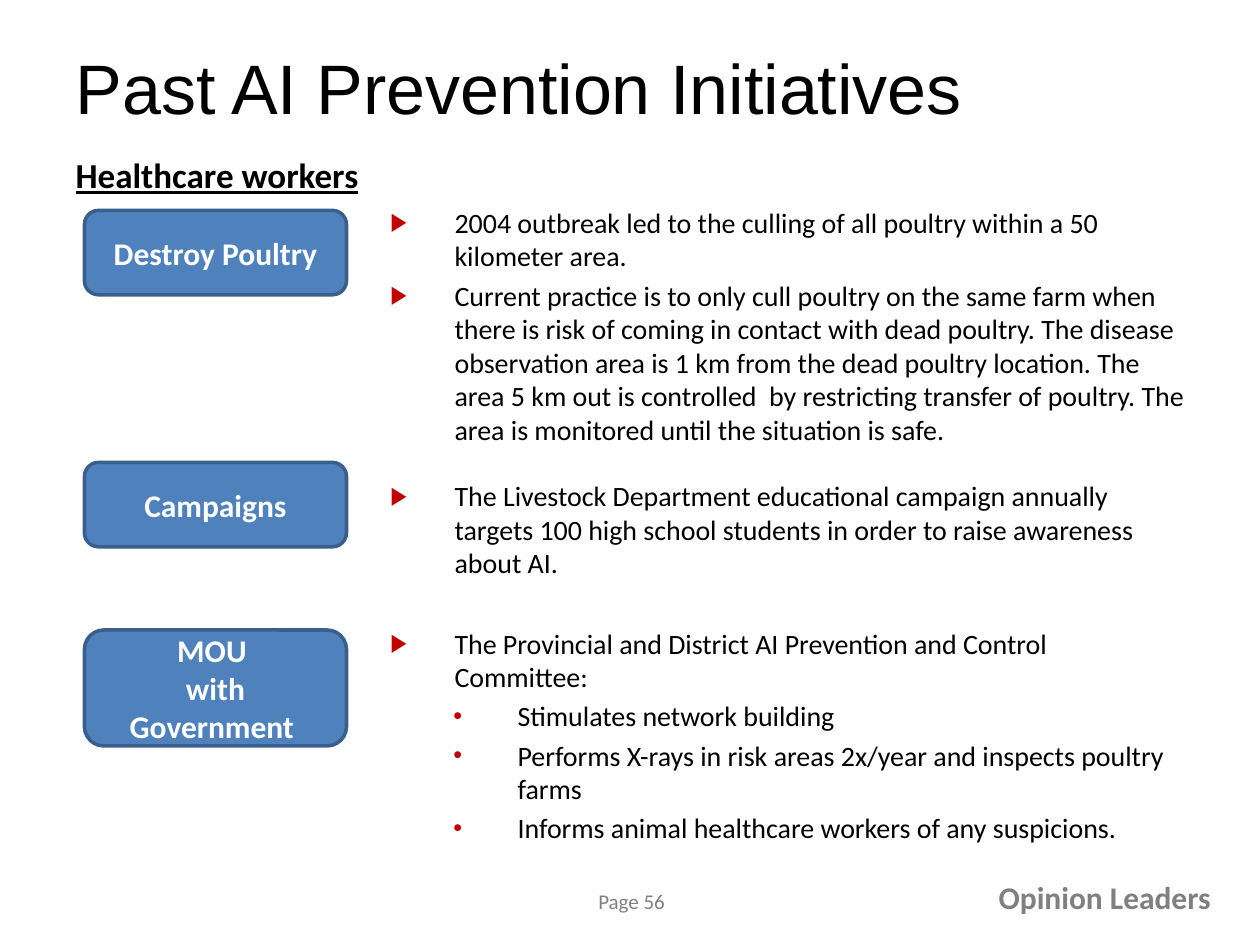
import dataclasses

import pptx
import pptx.dml.color
import pptx.enum.shapes
import pptx.enum.text
import pptx.oxml
import pptx.oxml.ns
import pptx.util

Inches = pptx.util.Inches
Pt = pptx.util.Pt
RGBColor = pptx.dml.color.RGBColor
Align = pptx.enum.text.PP_ALIGN
Anchor = pptx.enum.text.MSO_ANCHOR
AutoSize = pptx.enum.text.MSO_AUTO_SIZE


@dataclasses.dataclass(frozen=True)
class Theme:
    black: str = "000000"
    white: str = "FFFFFF"
    gray: str = "808080"
    red: str = "C00000"
    blue: str = "4F81BD"
    dark_blue: str = "3A5F8C"
    title_font: str = "Arial"
    body_font: str = "Calibri"
    title_size: int = 40
    heading_size: int = 20
    label_size: int = 18
    list_size: int = 16
    page_size: int = 12
    indent: float = 0.51
    sub_indent: float = 1.01


THEME = Theme()

TOPICS = [
    ("Destroy Poultry", (1.67, 0.67), (1.58, 6.5, 1.92), [
        (0, "2004 outbreak led to the culling of all poultry within a 50 kilometer area."),
        (0, "Current practice is to only cull poultry on the same farm when there is risk "
            "of coming in contact with dead poultry. The disease observation area is 1 km "
            "from the dead poultry location. The area 5 km out is controlled  by restricting "
            "transfer of poultry. The area is monitored until the situation is safe."),
    ]),
    ("Campaigns", (3.67, 0.67), (3.75, 6.42, 1), [
        (0, "The Livestock Department educational campaign annually targets 100 high school "
            "students in order to raise awareness about AI."),
    ]),
    ("MOU \nwith Government ", (5, 0.92), (4.92, 6.5, 2.33), [
        (0, "The Provincial and District AI Prevention and Control Committee:"),
        (1, "Stimulates network building"),
        (1, "Performs X-rays in risk areas 2x/year and inspects poultry farms"),
        (1, "Informs animal healthcare workers of any suspicions."),
    ]),
]


def set_values(target, values):
    for name, value in values.items():
        setattr(target, name, value)


def place(shape, left, top, width, height):
    sides = {"left": left, "top": top, "width": width, "height": height}
    set_values(shape, {name: Inches(value) for name, value in sides.items()})


def write(para, text, size, color, font=THEME.body_font, **style):
    span = para.add_run()
    span.text = text
    set_values(span.font, {"size": Pt(size), "name": font, **style})
    span.font.color.rgb = RGBColor.from_string(color)


def add_property(para, tag, **attributes):
    properties = para._p.get_or_add_pPr()
    element = pptx.oxml.ns.qn(f"a:{tag}")
    child = properties.makeelement(element, attributes)
    properties.append(child)
    return child


def set_indent(para, margin):
    properties = para._p.get_or_add_pPr()
    properties.set("marL", str(Inches(margin)))
    properties.set("indent", str(-Inches(THEME.indent)))


def add_bullet(para, symbol):
    color = add_property(para, "buClr")
    pptx.oxml.ns.qn("a:srgbClr")
    value = color.makeelement(pptx.oxml.ns.qn("a:srgbClr"), {"val": THEME.red})
    color.append(value)
    add_property(para, "buSzPct", val="90000")
    add_property(para, "buFont", typeface=THEME.title_font)
    add_property(para, "buChar", char=symbol)


def fill_title(page):
    box = page.shapes.title
    place(box, 0.5, 0.3, 9, 0.78)
    set_values(box.text_frame, {"auto_size": AutoSize.NONE, "vertical_anchor": Anchor.MIDDLE})
    para = box.text_frame.paragraphs[0]
    para.alignment = Align.LEFT
    write(para, "Past AI Prevention Initiatives", THEME.title_size, THEME.black, THEME.title_font)


def fill_heading(page):
    box = page.placeholders[1]
    place(box, 0.5, 1.17, 9, 2.25)
    box.text_frame.auto_size = AutoSize.NONE
    para = box.text_frame.paragraphs[0]
    set_values(para, {"alignment": Align.JUSTIFY, "space_before": Pt(THEME.heading_size * 0.2)})
    set_indent(para, THEME.indent)
    add_property(para, "buNone")
    write(para, "Healthcare workers", THEME.heading_size, THEME.black, bold=True, underline=True)


def add_label(page, text, top, height):
    kind = pptx.enum.shapes.MSO_SHAPE.ROUNDED_RECTANGLE
    box = page.shapes.add_shape(kind, Inches(0.67), Inches(top), Inches(2.08), Inches(height))
    box.shadow.inherit = False
    box.fill.solid()
    box.fill.fore_color.rgb = RGBColor.from_string(THEME.blue)
    box.line.color.rgb = RGBColor.from_string(THEME.dark_blue)
    box.line.width = Pt(2)
    frame = box.text_frame
    set_values(frame, {"word_wrap": True, "vertical_anchor": Anchor.MIDDLE})
    for number, line in enumerate(text.split("\n")):
        para = frame.add_paragraph() if number else frame.paragraphs[0]
        para.alignment = Align.CENTER
        write(para, line, THEME.label_size, THEME.white, bold=True)


def add_list(page, items, top, width, height):
    box = page.shapes.add_textbox(Inches(3), Inches(top), Inches(width), Inches(height))
    frame = box.text_frame
    frame.word_wrap = True
    for number, (level, text) in enumerate(items):
        para = frame.add_paragraph() if number else frame.paragraphs[0]
        set_values(para, {"level": level, "space_before": Pt(THEME.list_size * 0.2)})
        set_indent(para, THEME.sub_indent if level else THEME.indent)
        add_bullet(para, "•" if level else "▶")
        write(para, text, THEME.list_size, THEME.black)


def add_footer(page, text, sides, size, alignment, bold):
    box = page.shapes.add_textbox(*map(Inches, sides))
    set_values(box.text_frame, {"word_wrap": False, "auto_size": AutoSize.SHAPE_TO_FIT_TEXT})
    para = box.text_frame.paragraphs[0]
    para.alignment = alignment
    write(para, text, size, THEME.gray, bold=bold)


def main():
    deck = pptx.Presentation()
    set_values(deck, {"slide_width": Inches(10), "slide_height": Inches(7.5)})
    page = deck.slides.add_slide(deck.slide_layouts[1])
    fill_title(page)
    fill_heading(page)
    for label, label_rows, list_area, items in TOPICS:
        add_label(page, label, *label_rows)
        add_list(page, items, *list_area)
    add_footer(page, "Page 56", (4.65, 7, 0.77, 0.3), THEME.page_size, Align.LEFT, False)
    add_footer(page, "Opinion Leaders", (7.81, 6.92, 1.9, 0.4), THEME.label_size, Align.RIGHT, True)
    deck.save("out.pptx")


if __name__ == "__main__":
    main()
